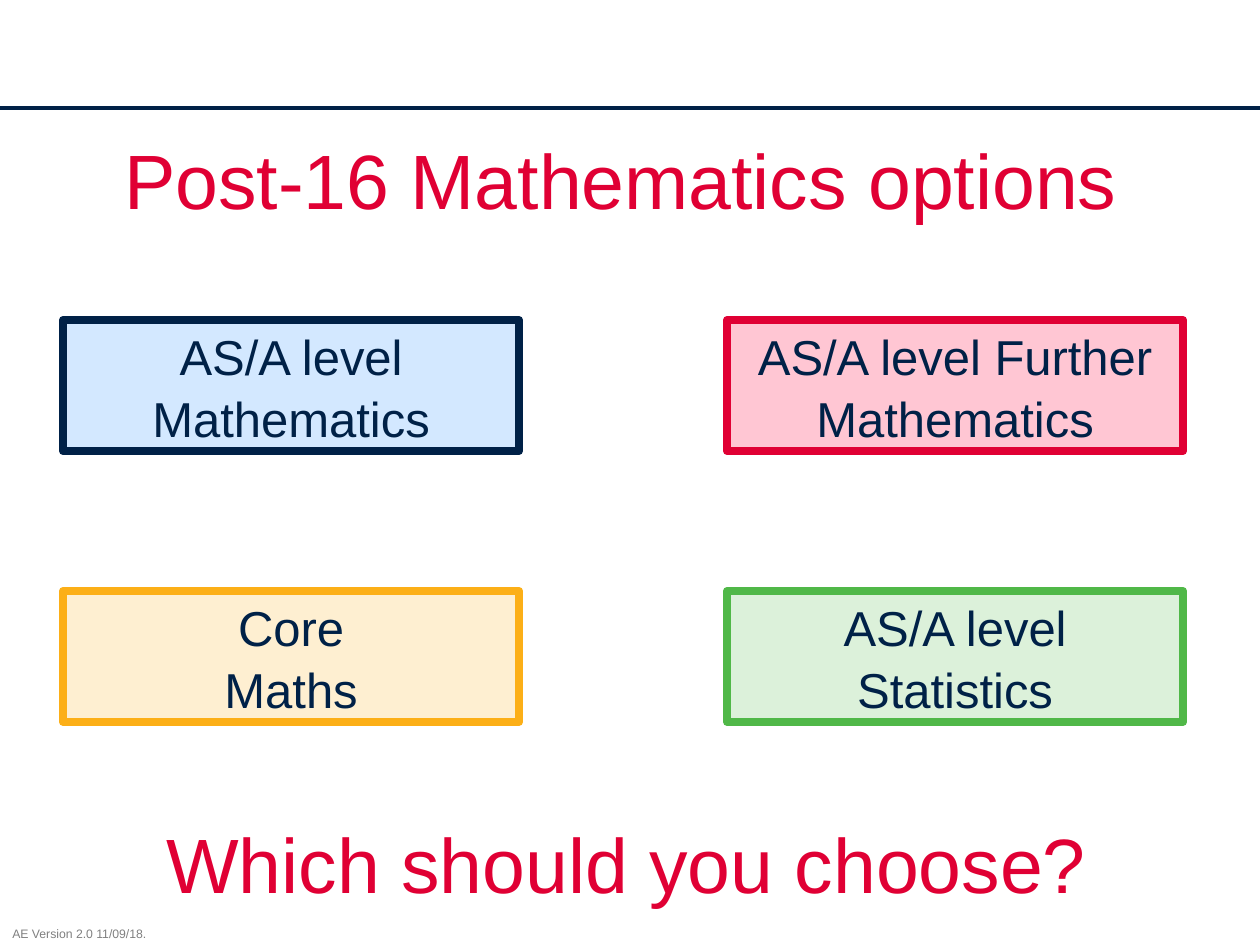
from lxml import etree
from pptx import Presentation
from pptx.dml.color import RGBColor
from pptx.enum.shapes import MSO_CONNECTOR as Connector, MSO_SHAPE as Shape
from pptx.enum.text import MSO_ANCHOR as Anchor, PP_ALIGN as Align
from pptx.oxml.ns import qn
from pptx.util import Inches, Pt

NAVY, RED, GREY = "002147", "E00034", "808080"

# Text, fill and border of each course, row by row
COURSES = [
    ("AS/A level Mathematics", "D3E8FF", NAVY),
    ("AS/A level Further Mathematics", "FFC6D3", RED),
    ("Core\nMaths", "FEEFD1", "FCAF17"),
    ("AS/A level Statistics", "DCF1DA", "50B848"),
]


def color(hex_value):
    return RGBColor.from_string(hex_value)


def write(shape, text, size=28, fill=NAVY, align=Align.LEFT,
          anchor=Anchor.TOP, spacing=None):
    frame = shape.text_frame
    frame.word_wrap = True
    frame.vertical_anchor = anchor
    frame.text = text
    for para in frame.paragraphs:
        para.alignment = align
        para.line_spacing = spacing
        para.font.name = "Arial"
        para.font.size = Pt(size)
        para.font.color.rgb = color(fill)


def add_rule(page, top):
    rule = page.shapes.add_connector(
        Connector.STRAIGHT, 0, Inches(top), Inches(10), Inches(top))
    rule.line.color.rgb = color(NAVY)
    rule.line.width = Pt(2.25)
    properties = rule._element.find(qn("p:spPr"))
    etree.SubElement(properties, qn("a:effectLst"))


def add_title(page, text):
    title = page.shapes.title
    title.left, title.top = Inches(0.47), Inches(0.99)
    title.width, title.height = Inches(8.92), Inches(0.85)
    write(title, text, size=44, fill=RED, align=Align.CENTER,
          anchor=Anchor.MIDDLE)


def add_label(page, text, left, top, width, height, **style):
    box = page.shapes.add_textbox(
        Inches(left), Inches(top), Inches(width), Inches(height))
    write(box, text, **style)


def add_course(page, text, left, top, fill, border):
    box = page.shapes.add_shape(
        Shape.RECTANGLE, Inches(left), Inches(top), Inches(3.62), Inches(1.04))
    box.shadow.inherit = False
    box.fill.solid()
    box.fill.fore_color.rgb = color(fill)
    box.line.color.rgb = color(border)
    box.line.width = Pt(4.5)
    write(box, text, align=Align.CENTER, anchor=Anchor.MIDDLE, spacing=1.05)


def main():
    deck = Presentation()
    deck.slide_width, deck.slide_height = Inches(10), Inches(7.5)
    page = deck.slides.add_slide(deck.slide_layouts[5])

    # Header rule and version note
    add_rule(page, 0.86)
    add_label(page, "AE Version 2.0 11/09/18.", 0, 7.3, 1.69, 0.22,
              size=7, fill=GREY)

    add_title(page, "Post-16 Mathematics options")

    # Two-by-two grid of courses
    for index, (text, fill, border) in enumerate(COURSES):
        row, column = divmod(index, 2)
        add_course(page, text, 0.5 + 5.27 * column, 2.54 + 2.15 * row,
                   fill, border)

    # Closing question
    add_label(page, "Which should you choose?", 1.22, 6.43, 8.43, 0.84,
              size=44, fill=RED)

    deck.save("out.pptx")


if __name__ == "__main__":
    main()
